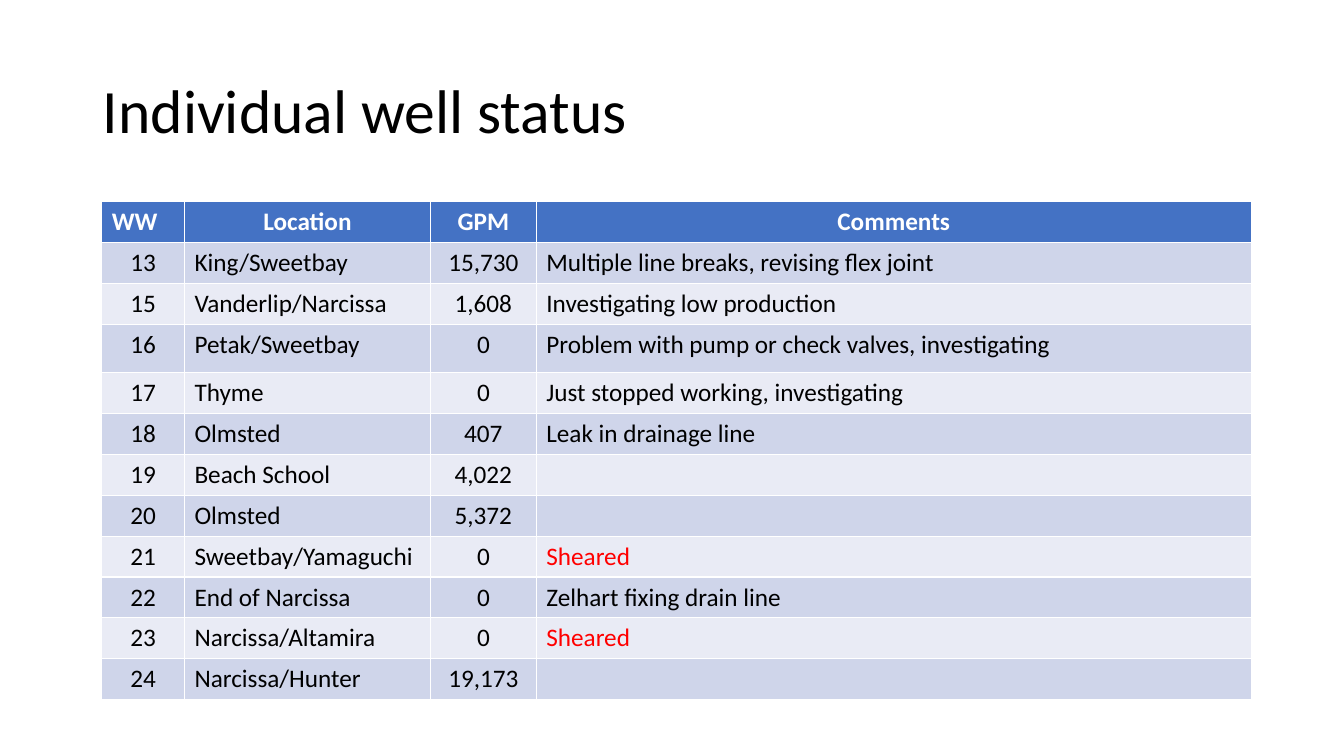
from dataclasses import dataclass

from pptx import Presentation
from pptx.dml.color import RGBColor
from pptx.enum.text import MSO_ANCHOR, PP_ALIGN
from pptx.util import Inches, Pt


@dataclass(frozen=True)
class Theme:
    font: str = "Calibri"
    title_size: int = 44
    table_size: int = 18
    text: str = "000000"
    header_text: str = "FFFFFF"
    alert: str = "FF0000"
    header_fill: str = "4472C4"
    bands: tuple = ("CFD5EA", "E9EBF5")


def style_paragraph(paragraph, size, color, bold, alignment):
    paragraph.alignment = alignment
    paragraph.font.name = theme.font
    paragraph.font.size = Pt(size)
    paragraph.font.bold = bold
    paragraph.font.color.rgb = RGBColor.from_string(color)


theme = Theme()
header = ("WW", "Location", "GPM", "Comments")
wells = [
    ("13", "King/Sweetbay", "15,730", "Multiple line breaks, revising flex joint"),
    ("15", "Vanderlip/Narcissa", "1,608", "Investigating low production"),
    ("16", "Petak/Sweetbay", "0", "Problem with pump or check valves, investigating"),
    ("17", "Thyme", "0", "Just stopped working, investigating"),
    ("18", "Olmsted", "407", "Leak in drainage line"),
    ("19", "Beach School", "4,022", ""),
    ("20", "Olmsted", "5,372", ""),
    ("21", "Sweetbay/Yamaguchi", "0", "Sheared"),
    ("22", "End of Narcissa", "0", "Zelhart fixing drain line"),
    ("23", "Narcissa/Altamira", "0", "Sheared"),
    ("24", "Narcissa/Hunter", "19,173", ""),
]
column_widths = (0.82, 2.44, 1.05, 7.09)
row_heights = [0.48 if well[0] == "16" else 0.4 for well in wells]
row_heights.insert(0, 0.4)
header_alignments = (PP_ALIGN.LEFT, PP_ALIGN.CENTER, PP_ALIGN.CENTER, PP_ALIGN.CENTER)
well_alignments = (PP_ALIGN.CENTER, PP_ALIGN.LEFT, PP_ALIGN.CENTER, PP_ALIGN.LEFT)

presentation = Presentation()
presentation.slide_width = Inches(13.33)
presentation.slide_height = Inches(7.5)
slide = presentation.slides.add_slide(presentation.slide_layouts[5])

title = slide.shapes.title
title.left, title.top = Inches(0.92), Inches(0.4)
title.width, title.height = Inches(11.5), Inches(1.45)
title.text_frame.text = "Individual well status"
title.text_frame.vertical_anchor = MSO_ANCHOR.MIDDLE
title_paragraph = title.text_frame.paragraphs[0]
title_paragraph.line_spacing = 0.9
style_paragraph(title_paragraph, theme.title_size, theme.text, False, PP_ALIGN.LEFT)

table = slide.shapes.add_table(
    len(row_heights), len(column_widths), Inches(1.01), Inches(2),
    Inches(sum(column_widths)), Inches(sum(row_heights)),
).table
for column, width in zip(table.columns, column_widths):
    column.width = Inches(width)
for row, height in zip(table.rows, row_heights):
    row.height = Inches(height)

for row_index, values in enumerate([header, *wells]):
    is_header = row_index == 0
    fill = theme.header_fill if is_header else theme.bands[(row_index - 1) % 2]
    alignments = header_alignments if is_header else well_alignments
    for column_index, value in enumerate(values):
        cell = table.cell(row_index, column_index)
        cell.fill.solid()
        cell.fill.fore_color.rgb = RGBColor.from_string(fill)
        cell.text = value
        color = theme.header_text if is_header else theme.text
        if value == "Sheared":
            color = theme.alert
        style_paragraph(cell.text_frame.paragraphs[0], theme.table_size, color,
                        is_header, alignments[column_index])

presentation.save("out.pptx")
